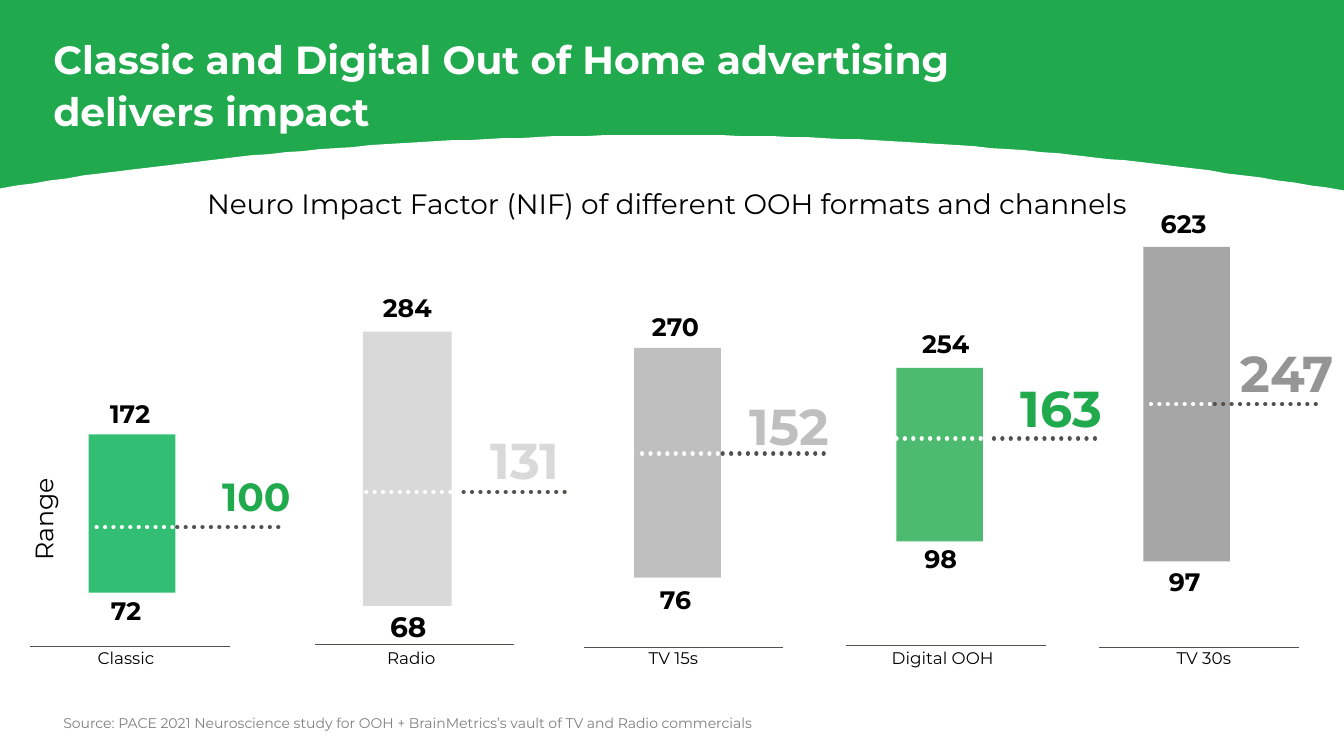
from dataclasses import dataclass

from lxml.etree import SubElement
from pptx import Presentation
from pptx.dml.color import RGBColor
from pptx.enum.dml import MSO_LINE
from pptx.enum.shapes import MSO_CONNECTOR, MSO_SHAPE
from pptx.enum.text import MSO_ANCHOR, PP_ALIGN
from pptx.oxml.ns import qn
from pptx.util import Emu, Pt

PX = 9144  # 100 px to the inch
SLIDE_W, SLIDE_H = 1333, 750
AXIS_LENGTH, MEAN_TAIL = 198, 105


@dataclass(frozen=True)
class Theme:
    font: str = "Montserrat"
    green: str = "20AA4D"
    classic_green: str = "00B050"
    white: str = "FFFFFF"
    black: str = "000000"
    rule: str = "55504C"
    source_grey: str = "808080"
    radio_grey: str = "D9D9D9"
    tv15_grey: str = "BFBFBF"
    tv30_grey: str = "A6A6A6"
    tv30_mean_grey: str = "959595"
    title: int = 28
    subtitle: int = 20
    limit: int = 18
    category: int = 12
    source: int = 10
    mean: int = 36
    classic_mean: int = 28
    radio_low: int = 20


THEME = Theme()


@dataclass(frozen=True)
class Channel:
    """Limits are (text, centre, top); bar is (left, top, width, height)."""
    name: str
    name_centre: int
    axis: tuple
    bar: tuple
    bar_colour: str
    high: tuple
    low: tuple
    mean: str
    mean_right: int
    mean_top: int
    mean_colour: str
    mean_line_y: int
    mean_split: int
    mean_size: int = THEME.mean
    low_size: int = THEME.limit
    opacity: int = 100


CHANNELS = [
    Channel("Classic", 125, (30, 641), (88, 431, 86, 157), THEME.classic_green,
            ("172", 129, 390), ("72", 125, 586), "100", 298, 464, THEME.green,
            523, 171, mean_size=THEME.classic_mean, opacity=80),
    Channel("Radio", 408, (312, 639), (360, 329, 88, 272), THEME.radio_grey,
            ("284", 404, 285), ("68", 405, 600), "131", 565, 428, THEME.radio_grey,
            488, 455, low_size=THEME.radio_low),
    Channel("TV 15s", 668, (579, 642), (629, 345, 86, 228), THEME.tv15_grey,
            ("270", 670, 304), ("76", 670, 575), "152", 832, 394, THEME.tv15_grey,
            450, 712),
    Channel("Digital OOH", 935, (839, 640), (889, 365, 86, 172), THEME.green,
            ("254", 938, 321), ("98", 933, 534), "163", 1103, 376, THEME.green,
            435, 981, opacity=80),
    Channel("TV 30s", 1194, (1090, 642), (1134, 245, 86, 312), THEME.tv30_grey,
            ("623", 1174, 202), ("97", 1175, 557), "247", 1333, 341,
            THEME.tv30_mean_grey, 401, 1200),
]


def px(*lengths):
    return [Emu(length * PX) for length in lengths]


def paint(shape, colour, opacity=100):
    shape.shadow.inherit = False
    shape.line.fill.background()
    shape.fill.solid()
    shape.fill.fore_color.rgb = RGBColor.from_string(colour)
    if opacity < 100:
        tint = shape.fill._xPr.find(f".//{qn('a:srgbClr')}")
        SubElement(tint, qn("a:alpha"), val=str(opacity * 1000))


def add_label(slide, box, text, size, colour=THEME.black, bold=False,
              align=PP_ALIGN.CENTER, anchor=MSO_ANCHOR.TOP):
    label = slide.shapes.add_textbox(*px(*box))
    frame = label.text_frame
    frame.word_wrap = True
    frame.vertical_anchor = anchor
    frame.text = text
    paragraph = frame.paragraphs[0]
    paragraph.alignment = align
    font = paragraph.runs[0].font
    font.name, font.size, font.bold = THEME.font, Pt(size), bold
    font.color.rgb = RGBColor.from_string(colour)
    return label


def add_rule(slide, start, end, y, colour, weight, dotted=False):
    rule = slide.shapes.add_connector(MSO_CONNECTOR.STRAIGHT, *px(start, y, end, y))
    rule.line.color.rgb = RGBColor.from_string(colour)
    rule.line.width = Pt(weight)
    if dotted:
        rule.line.dash_style = MSO_LINE.ROUND_DOT
        rule.line._get_or_add_ln().set("cap", "rnd")
    SubElement(rule._element.spPr, qn("a:effectLst"))


def add_curved_panel(slide):
    """White area whose top edge is a shallow parabola across the slide."""
    crest_x, crest_y, drop = 660, 134, 54
    xs = [SLIDE_W * step / 80 for step in range(81)]
    edge = [(x, crest_y + drop * ((x - crest_x) / (SLIDE_W / 2)) ** 2) for x in xs]
    builder = slide.shapes.build_freeform(*edge[0], scale=PX)
    builder.add_line_segments(edge[1:] + [(SLIDE_W, SLIDE_H), (0, SLIDE_H)])
    paint(builder.convert_to_shape(), THEME.white)


def add_header(slide):
    title = add_label(slide, (53, 35, 1024, 98),
                      "Classic and Digital Out of Home advertising delivers impact",
                      THEME.title, THEME.white, True, PP_ALIGN.LEFT, MSO_ANCHOR.BOTTOM)
    frame = title.text_frame
    frame.margin_left = frame.margin_right = frame.margin_top = frame.margin_bottom = 0
    frame.paragraphs[0].line_spacing = 1.1
    add_label(slide, (77, 180, 1169, 44),
              "Neuro Impact Factor (NIF) of different OOH formats and channels",
              THEME.subtitle)


def add_channel(slide, channel):
    bar = slide.shapes.add_shape(MSO_SHAPE.RECTANGLE, *px(*channel.bar))
    paint(bar, channel.bar_colour, channel.opacity)

    limits = ((channel.high, THEME.limit), (channel.low, channel.low_size))
    for (value, centre, top), size in limits:
        add_label(slide, (centre - 53, top, 106, 40), value, size, bold=True)

    axis_left, axis_y = channel.axis
    add_rule(slide, axis_left, axis_left + AXIS_LENGTH, axis_y, THEME.rule, 0.5)
    add_label(slide, (channel.name_centre - 78, 638, 156, 30), channel.name,
              THEME.category)

    split, mean_y = channel.mean_split, channel.mean_line_y
    add_rule(slide, split + MEAN_TAIL, split, mean_y, THEME.rule, 3, dotted=True)
    add_rule(slide, split, channel.bar[0], mean_y, THEME.white, 3, dotted=True)
    add_label(slide, (channel.mean_right - 167, channel.mean_top, 167, 56),
              channel.mean, channel.mean_size, channel.mean_colour, True,
              PP_ALIGN.RIGHT, MSO_ANCHOR.MIDDLE)


def main():
    presentation = Presentation()
    presentation.slide_width, presentation.slide_height = px(SLIDE_W, SLIDE_H)
    slide = presentation.slides.add_slide(presentation.slide_layouts[6])
    slide.background.fill.solid()
    slide.background.fill.fore_color.rgb = RGBColor.from_string(THEME.green)

    add_curved_panel(slide)
    add_header(slide)
    range_label = add_label(slide, (-19, 484, 124, 40), "Range", THEME.limit,
                            align=PP_ALIGN.LEFT)
    range_label.rotation = 270
    for channel in CHANNELS:
        add_channel(slide, channel)
    add_label(slide, (53, 704, 1169, 27),
              "Source: PACE 2021 Neuroscience study for OOH + BrainMetrics’s vault "
              "of TV and Radio commercials",
              THEME.source, THEME.source_grey, align=PP_ALIGN.LEFT)
    presentation.save("out.pptx")


if __name__ == "__main__":
    main()
